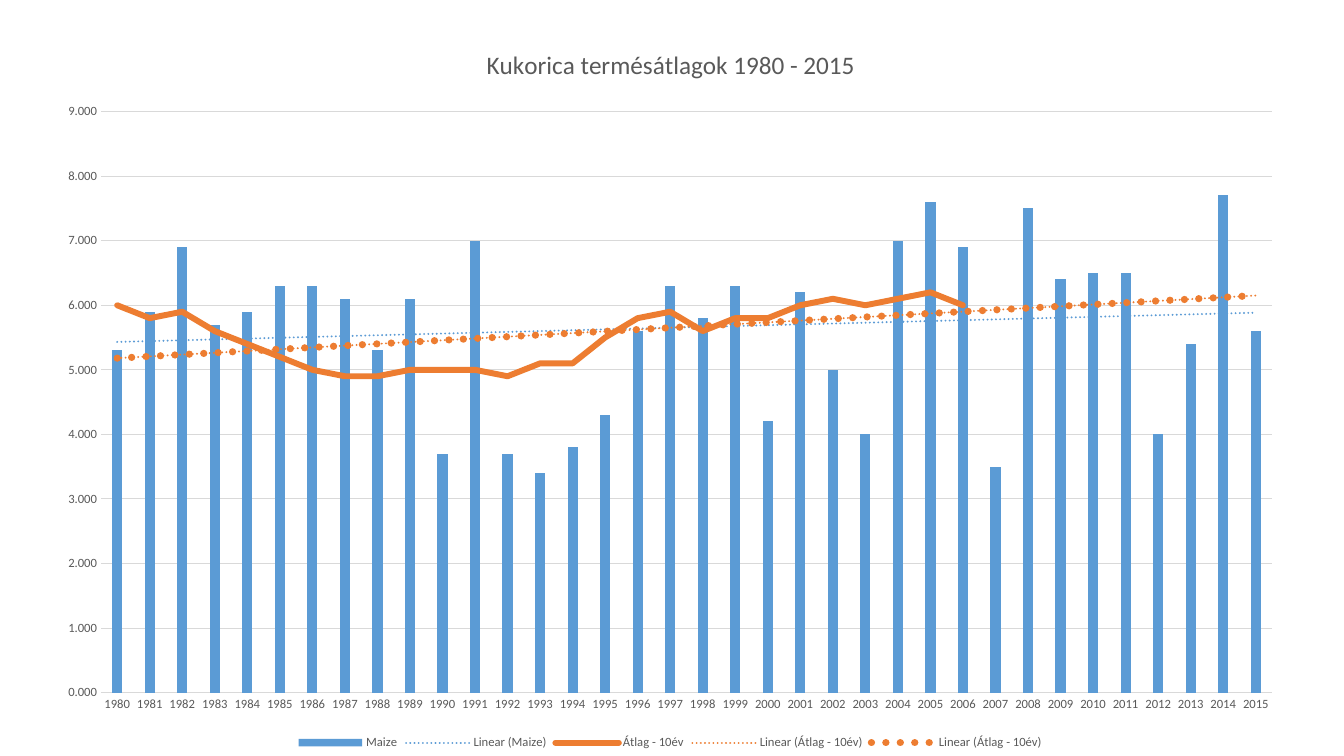
from dataclasses import dataclass

from lxml.etree import SubElement
from pptx import Presentation
from pptx.chart.data import CategoryChartData
from pptx.dml.color import RGBColor
from pptx.enum.chart import (XL_CHART_TYPE, XL_LEGEND_POSITION, XL_MARKER_STYLE,
                             XL_TICK_MARK)
from pptx.oxml import parse_xml
from pptx.oxml.ns import nsdecls, qn
from pptx.util import Cm, Pt


@dataclass(frozen=True)
class Theme:
    font: str = "Calibri"
    text: str = "595959"
    grid: str = "D9D9D9"
    maize: str = "5B9BD5"
    average: str = "ED7D31"
    title_size: float = 18
    label_size: float = 9
    hairline: float = 0.75
    trend_width: float = 1.5
    dots_width: float = 5.15
    average_width: float = 4.25


YEARS = [str(year) for year in range(1980, 2016)]
MAIZE = [5.3, 5.9, 6.9, 5.7, 5.9, 6.3, 6.3, 6.1, 5.3, 6.1, 3.7, 7, 3.7, 3.4, 3.8,
         4.3, 5.6, 6.3, 5.8, 6.3, 4.2, 6.2, 5, 4, 7, 7.6, 6.9, 3.5, 7.5, 6.4, 6.5,
         6.5, 4, 5.4, 7.7, 5.6]
AVERAGE = [6, 5.8, 5.9, 5.6, 5.4, 5.2, 5, 4.9, 4.9, 5, 5, 5, 4.9, 5.1, 5.1, 5.5,
           5.8, 5.9, 5.6, 5.8, 5.8, 6, 6.1, 6, 6.1, 6.2, 6]
AVERAGE += [None] * (len(YEARS) - len(AVERAGE))


class YieldSlide:
    def __init__(self, slide, theme):
        self.slide = slide
        self.theme = theme

    def style_font(self, font, size):
        font.name = self.theme.font
        font.size = Pt(size)
        font.bold = False
        font.color.rgb = RGBColor.from_string(self.theme.text)

    def style_line(self, line, color, width):
        line.color.rgb = RGBColor.from_string(color)
        line.width = Pt(width)

    def add_yield_chart(self, left, top, width, height):
        data = CategoryChartData(number_format="0.000")
        data.categories = YEARS
        data.add_series("Maize", MAIZE)
        data.add_series("Átlag - 10év", AVERAGE)
        chart = self.slide.shapes.add_chart(
            XL_CHART_TYPE.COLUMN_CLUSTERED, left, top, width, height, data).chart
        self.style_font(chart.font, self.theme.label_size)
        return chart

    def place(self, part, x, y, w=None, h=None, inner=False):
        """Fix a chart part's place, in percent of the chart area."""
        old = part.find(qn("c:layout"))
        if old is not None:
            part.remove(old)
        layout = parse_xml(f'<c:layout {nsdecls("c")}/>')
        manual = SubElement(layout, qn("c:manualLayout"))
        settings = [("layoutTarget", "inner")] if inner else []
        settings += [("xMode", "edge"), ("yMode", "edge")]
        settings += [(tag, round(percent / 100, 4))
                     for tag, percent in zip("xywh", (x, y, w, h))
                     if percent is not None]
        for tag, value in settings:
            SubElement(manual, qn(f"c:{tag}")).set("val", str(value))
        if inner:
            part.insert(0, layout)
        else:
            part.find(qn("c:overlay")).addprevious(layout)

    def add_title(self, chart, title):
        frame = chart.chart_title.text_frame
        frame.text = title
        self.style_font(frame.paragraphs[0].runs[0].font, self.theme.title_size)
        chart.chart_title.include_in_layout = False
        self.place(chart.chart_title._element, 35, 2.6)

    def add_legend(self, chart):
        chart.has_legend = True
        chart.legend.position = XL_LEGEND_POSITION.BOTTOM
        chart.legend.include_in_layout = False
        self.style_font(chart.legend.font, self.theme.label_size)
        self.place(chart.legend._element, 20, 97.1, 60, 3)

    def style_axes(self, chart):
        years, yields = chart.category_axis, chart.value_axis
        for axis in (years, yields):
            axis.major_tick_mark = axis.minor_tick_mark = XL_TICK_MARK.NONE
            self.style_font(axis.tick_labels.font, self.theme.label_size)
        self.style_line(years.format.line, self.theme.grid, self.theme.hairline)
        yields.format.line.fill.background()
        yields.has_major_gridlines = True
        self.style_line(yields.major_gridlines.format.line, self.theme.grid,
                        self.theme.hairline)
        yields.minimum_scale, yields.maximum_scale, yields.major_unit = 0, 9, 1
        yields.tick_labels.number_format = "0.000"
        yields.tick_labels.number_format_is_linked = False

    def style_columns(self, plot):
        plot.gap_width, plot.overlap = 219, -27
        plot.vary_by_categories = False
        fill = plot.series[0].format.fill
        fill.solid()
        fill.fore_color.rgb = RGBColor.from_string(self.theme.maize)

    def move_to_line_plot(self, chart):
        """Turn the last column series into a line on the same axes."""
        columns = chart.plots[0]._element
        ser = columns.findall(qn("c:ser"))[-1]
        invert = ser.find(qn("c:invertIfNegative"))
        if invert is not None:
            ser.remove(invert)
        lines = parse_xml(f'<c:lineChart {nsdecls("c")}><c:grouping val="standard"/>'
                          '<c:varyColors val="0"/></c:lineChart>')
        lines.append(ser)
        SubElement(lines, qn("c:marker")).set("val", "1")
        for axis_id in columns.findall(qn("c:axId")):
            SubElement(lines, qn("c:axId")).set("val", axis_id.get("val"))
        columns.addnext(lines)
        average = chart.plots[1].series[0]
        average.smooth = False
        average.marker.style = XL_MARKER_STYLE.NONE
        self.style_line(average.format.line, self.theme.average,
                        self.theme.average_width)
        average.format.line._ln.set("cap", "rnd")
        return average

    def add_trend(self, series, color, width):
        trend = parse_xml(
            f'<c:trendline {nsdecls("c", "a")}><c:spPr>'
            f'<a:ln w="{Pt(width)}" cap="rnd"><a:solidFill><a:srgbClr val="{color}"/>'
            '</a:solidFill><a:prstDash val="sysDot"/></a:ln></c:spPr>'
            '<c:trendlineType val="linear"/><c:dispRSqr val="0"/>'
            '<c:dispEq val="0"/></c:trendline>')
        series._element.find(qn("c:cat")).addprevious(trend)


def main():
    presentation = Presentation()
    presentation.slide_width, presentation.slide_height = Cm(33.87), Cm(19.05)
    theme = Theme()
    page = YieldSlide(
        presentation.slides.add_slide(presentation.slide_layouts[6]), theme)

    chart = page.add_yield_chart(Cm(1.09), Cm(0.61), Cm(31.6), Cm(18.44))
    page.add_title(chart, "Kukorica termésátlagok 1980 - 2015")
    page.add_legend(chart)
    page.style_axes(chart)
    page.style_columns(chart.plots[0])
    average = page.move_to_line_plot(chart)
    page.add_trend(chart.plots[0].series[0], theme.maize, theme.trend_width)
    for width in (theme.trend_width, theme.dots_width):
        page.add_trend(average, theme.average, width)
    plot_area = chart.plots[0]._element.getparent()
    page.place(plot_area, 4.6, 11.95, 93.4, 79.4, inner=True)

    presentation.save("out.pptx")


if __name__ == "__main__":
    main()
